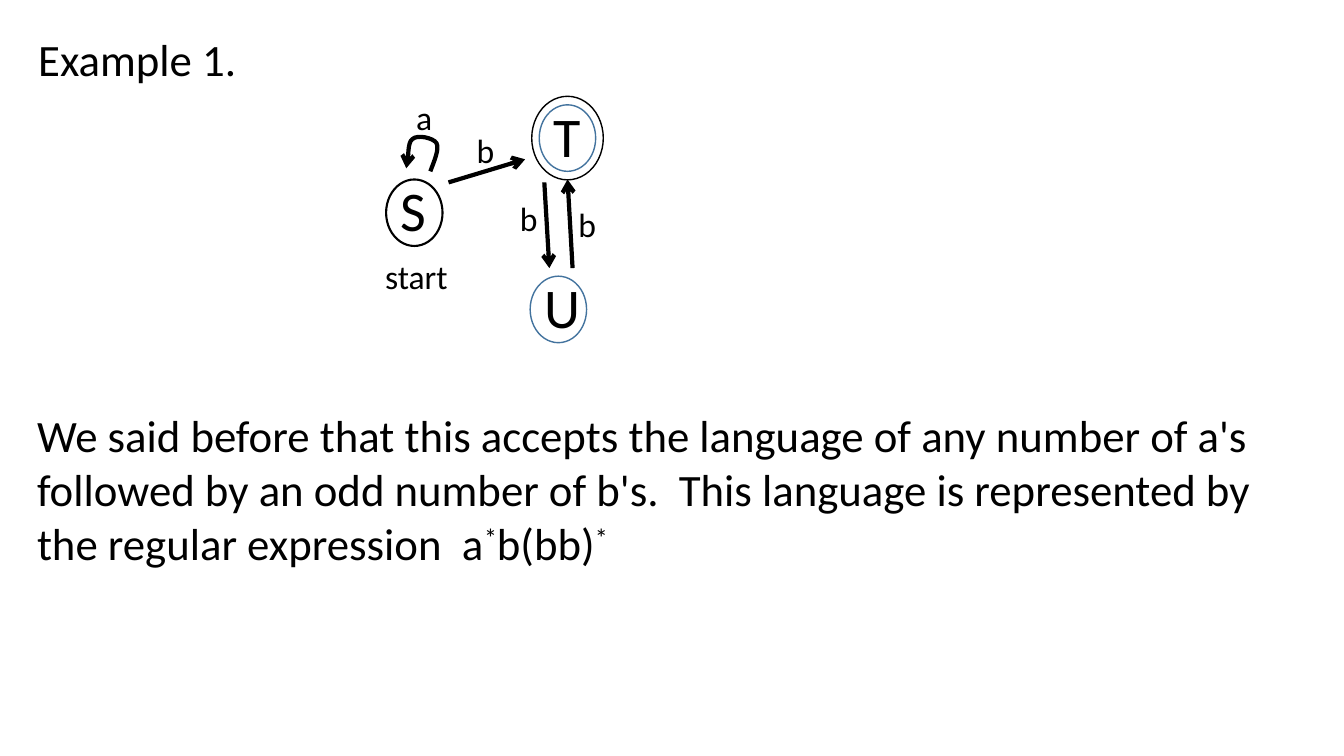
from lxml import etree
from pptx import Presentation
from pptx.dml.color import RGBColor
from pptx.enum import shapes, text
from pptx.oxml import ns
from pptx.util import Pt

BLACK, BLUE = "000000", "43739E"
STATE_W, STATE_H = 40.3, 47.5


def color(hex_value):
    return RGBColor.from_string(hex_value)


def set_line(shape, hex_value, width):
    shape.line.color.rgb = color(hex_value)
    shape.line.width = Pt(width)


def add_arrowhead(shape):
    etree.SubElement(shape.line._get_or_add_ln(), ns.qn("a:tailEnd"), type="arrow")


def add_text(slide, x, y, w, h, runs, size):
    """Add one paragraph; runs are (wording, is superscript) pairs."""
    frame = slide.shapes.add_textbox(Pt(x), Pt(y), Pt(w), Pt(h)).text_frame
    frame.word_wrap = True
    frame.auto_size = text.MSO_AUTO_SIZE.SHAPE_TO_FIT_TEXT
    for wording, raised in runs:
        run = frame.paragraphs[0].add_run()
        run.text = wording
        for key, value in {"name": "Calibri", "size": Pt(size)}.items():
            setattr(run.font, key, value)
        run.font.color.rgb = color(BLACK)
        if raised:
            run.font._element.set("baseline", "30000")


def add_ellipse(slide, x, y, w, h, hex_value, width):
    ellipse = slide.shapes.add_shape(
        shapes.MSO_SHAPE.OVAL, Pt(x), Pt(y), Pt(w), Pt(h))
    ellipse.shadow.inherit = False
    ellipse.fill.background()
    set_line(ellipse, hex_value, width)


def add_state(slide, x, y, name, hex_value, width, accepting=False):
    add_ellipse(slide, x, y, STATE_W, STATE_H, hex_value, width)
    add_text(slide, x + 3.4, y - 6.1, 20.2, 55.4, [(name, False)], 40)
    if accepting:
        gap_x, gap_y = 5.4, 6.1
        add_ellipse(slide, x - gap_x, y - gap_y,
                    STATE_W + 2 * gap_x, STATE_H + 2 * gap_y, BLACK, 1)


def add_transition(slide, x1, y1, x2, y2):
    arrow = slide.shapes.add_connector(
        shapes.MSO_CONNECTOR.STRAIGHT, Pt(x1), Pt(y1), Pt(x2), Pt(y2))
    set_line(arrow, BLACK, 3)
    add_arrowhead(arrow)
    etree.SubElement(arrow._element.spPr, ns.qn("a:effectLst"))


def bezier_point(p0, p1, p2, p3, t):
    s = 1 - t
    return tuple(s**3 * a + 3 * s * s * t * b + 3 * s * t * t * c + t**3 * d
                 for a, b, c, d in zip(p0, p1, p2, p3))


def add_loop(slide, x, y):
    """Draw the arrow from S back to itself, as three joined curves."""
    knots = [(39.4, 57.4), (42.3, 49.5), (45.9, 41.6), (43.8, 37.2),
             (41.6, 33.6), (30.1, 30.8), (26.5, 34.4),
             (22.9, 37.2), (24.3, 45.9), (22.2, 55.2)]
    steps = 8
    points = [knots[0]] + [
        bezier_point(*knots[start:start + 4], step / steps)
        for start in (0, 3, 6) for step in range(1, steps + 1)]
    points = [(Pt(x + px), Pt(y + py)) for px, py in points]
    builder = slide.shapes.build_freeform(*points[0])
    builder.add_line_segments(points[1:], close=False)
    loop = builder.convert_to_shape()
    loop.shadow.inherit = False
    loop.fill.background()
    set_line(loop, BLACK, 3)
    add_arrowhead(loop)


def add_automaton(slide, x, y):
    # States
    add_state(slide, x + 7.8, y + 63.2, "S", BLACK, 1.5)
    add_state(slide, x + 110.7, y + 132.3, "U", BLUE, 1)
    add_state(slide, x + 117.2, y + 9.9, "T", BLUE, 1, accepting=True)

    # Transitions: S to T, T to U, U to T, S to S
    for x1, y1, x2, y2 in [(52.4, 65.3, 107.1, 48.8),
                           (120.8, 65.3, 124.4, 126.5),
                           (141, 126.5, 137.4, 63.2)]:
        add_transition(slide, x + x1, y + y1, x + x2, y + y2)
    add_loop(slide, x, y)

    # Labels
    for label, dx, dy, w in [("start", 0, 114.3, 76.3), ("a", 22.2, 0.5, 26.6),
                             ("b", 65.4, 24.3, 26.6), ("b", 96.3, 73.2, 26.6),
                             ("b", 138.1, 76.8, 26.6)]:
        add_text(slide, x + dx, y + dy, w, 36, [(label, False)], 24)


def add_explanation(slide, x, y, w, h):
    sentence = ("We said before that this accepts the language of any number of "
                "a's followed by an odd number of b's.  This language is "
                "represented by the regular expression  a")
    add_text(slide, x, y, w, h, [(sentence, False), ("*", True),
                                 ("b(bb)", False), ("*", True)], 32)


def main():
    deck = Presentation()
    deck.slide_width, deck.slide_height = Pt(960), Pt(540)
    slide = deck.slides.add_slide(deck.slide_layouts[6])
    add_automaton(slide, 268, 65)
    add_explanation(slide, 19.4, 288, 916.6, 123.8)
    add_text(slide, 20.2, 19.4, 163.4, 46, [("Example 1.", False)], 32)
    deck.save("out.pptx")


if __name__ == "__main__":
    main()
